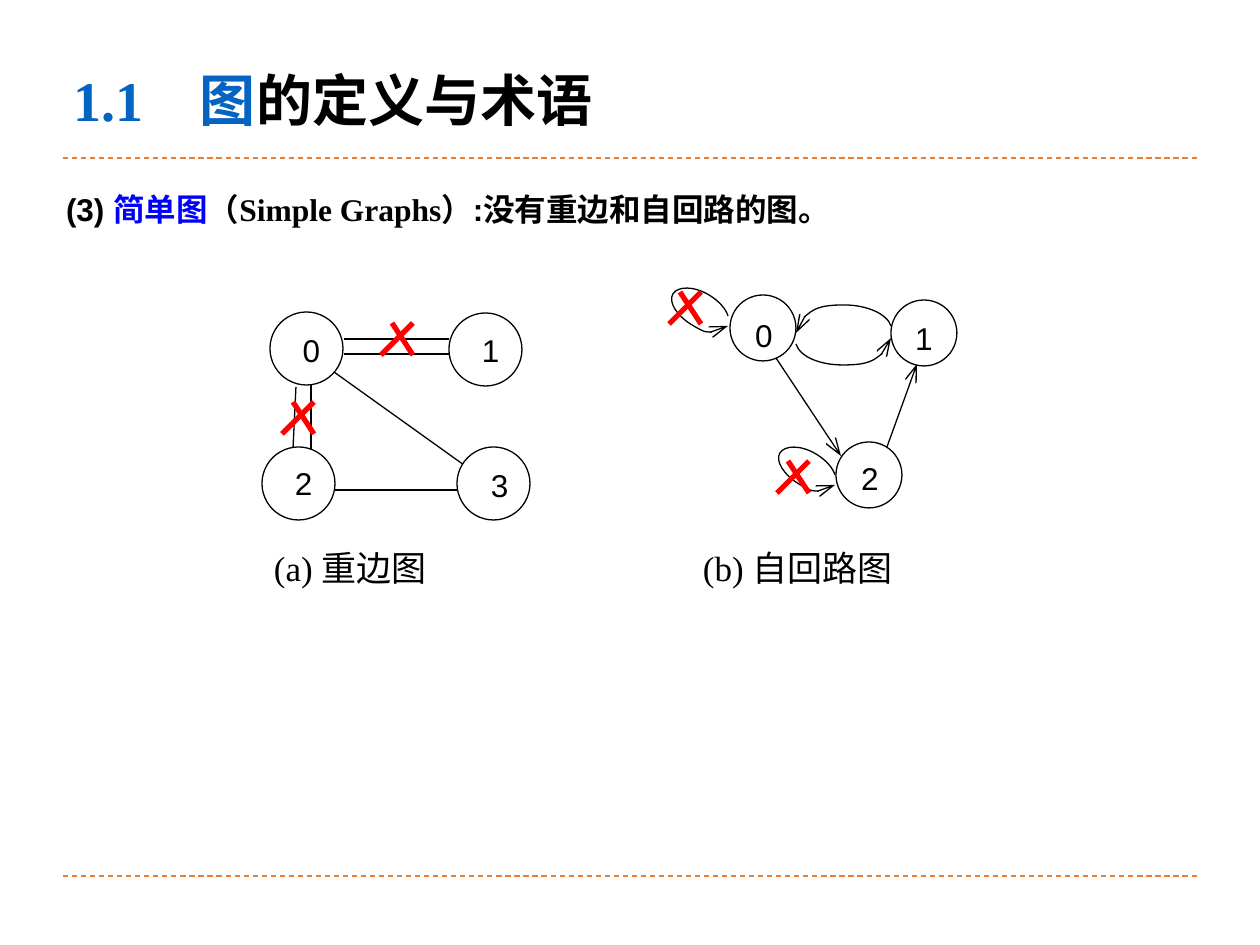
from dataclasses import dataclass

from lxml import etree
from pptx import Presentation
from pptx.dml.color import RGBColor
from pptx.enum.dml import MSO_LINE
from pptx.enum.shapes import MSO_CONNECTOR, MSO_SHAPE
from pptx.enum.text import MSO_ANCHOR, MSO_AUTO_SIZE, PP_ALIGN
from pptx.oxml.ns import qn
from pptx.util import Pt

STRAIGHT = MSO_CONNECTOR.STRAIGHT
OVAL, RECT = MSO_SHAPE.OVAL, MSO_SHAPE.RECTANGLE
DASH = MSO_LINE.DASH
TOP, MIDDLE = MSO_ANCHOR.TOP, MSO_ANCHOR.MIDDLE
LEFT, CENTER = PP_ALIGN.LEFT, PP_ALIGN.CENTER
NO_FIT = MSO_AUTO_SIZE.NONE


@dataclass(frozen=True)
class Theme:
    ink: RGBColor = RGBColor.from_string("000000")
    paper: RGBColor = RGBColor.from_string("FFFFFF")
    accent: RGBColor = RGBColor.from_string("0563C1")
    term: RGBColor = RGBColor.from_string("0000FF")
    rule: RGBColor = RGBColor.from_string("ED7D31")
    cross: RGBColor = RGBColor.from_string("FF0000")
    sans: str = "Arial"
    serif: str = "Times New Roman"
    title: int = 32
    body: int = 18
    caption: int = 20
    thin: float = 0.75
    thick: int = 3


T = Theme()
LOOP = [(0, 0), (-2, -7), (-9, -15), (-19, -21), (-34, -30), (-50, -30), (-55, -22),
        (-60, -14), (-51, 0), (-36, 9), (-21, 18), (-5, 19), (0, 10)]


def px(n):
    return round(n * 914400 / 126)


def add_run(p, text, size, font, color, bold=False):
    r = p.add_run()
    r.text = text
    r.font.size, r.font.name, r.font.bold = Pt(size), font, bold
    r.font.color.rgb = color


def place(sp, box):
    sp.left, sp.top, sp.width, sp.height = map(px, box)


def set_frame(tf, anchor, margins=(12, 6, 12, 6), wrap=True):
    tf.word_wrap = wrap
    tf.auto_size = NO_FIT
    tf.vertical_anchor = anchor
    tf.margin_left, tf.margin_top, tf.margin_right, tf.margin_bottom = map(px, margins)
    return tf.paragraphs[0]


def add_tab(p, pos):
    tabs = etree.SubElement(p._p.get_or_add_pPr(), qn("a:tabLst"))
    etree.SubElement(tabs, qn("a:tab"), pos=str(px(pos)), algn="l")


def add_arrow(line):
    etree.SubElement(line._get_or_add_ln(), qn("a:tailEnd"),
                     type="arrow", w="med", len="lg")


def add_line(shapes, x1, y1, x2, y2, color=T.ink, width=T.thin):
    c = shapes.add_connector(STRAIGHT, *map(px, (x1, y1, x2, y2)))
    c.line.color.rgb, c.line.width = color, Pt(width)
    etree.SubElement(c._element.spPr, qn("a:effectLst"))
    return c


def add_curve(shapes, x, y, controls):
    points = [(px(x + dx), px(y + dy)) for dx, dy in controls]
    builder = shapes.build_freeform(*points[0])
    builder.add_line_segments(points[1:], close=False)
    sp = builder.convert_to_shape()
    segments = list(sp._element.iter(qn("a:lnTo")))
    outline = segments[0].getparent()
    for i in range(0, len(segments), 3):
        bezier = etree.SubElement(outline, qn("a:cubicBezTo"))
        for segment in segments[i:i + 3]:
            bezier.append(segment[0])
            outline.remove(segment)
    sp.shadow.inherit = False
    sp.fill.background()
    sp.line.color.rgb, sp.line.width = T.ink, Pt(T.thin)
    add_arrow(sp.line)


def add_node(shapes, x, y, size, label, label_box):
    circle = shapes.add_shape(OVAL, *map(px, (x, y, size, size)))
    tag = shapes.add_shape(RECT, *map(px, label_box))
    for sp in (circle, tag):
        sp.shadow.inherit = False
        sp.fill.solid()
        sp.fill.fore_color.rgb = T.paper
    circle.line.color.rgb, circle.line.width = T.ink, Pt(T.thin)
    tag.line.fill.background()
    p = set_frame(tag.text_frame, TOP, (0, 0, 0, 0))
    p.alignment = CENTER
    add_run(p, label, T.body, T.sans, T.ink)


def add_cross(s, x, y):
    shapes = s.shapes.add_group_shape().shapes
    for x1, x2 in ((11, 32), (32, 0)):
        add_line(shapes, x + x1, y, x + x2, y + 32, T.cross, T.thick)


def add_captions(s, box):
    sp = s.shapes.add_textbox(*map(px, box))
    p = set_frame(sp.text_frame, MIDDLE)
    add_tab(p, 429)
    add_run(p, "(a) 重边图\t(b) 自回路图", T.caption, T.serif, T.ink)


def add_title(s, box):
    sp = s.shapes.title
    place(sp, box)
    p = set_frame(sp.text_frame, MIDDLE, (15, 6, 20, 6))
    add_tab(p, 126)
    p.alignment = LEFT
    add_run(p, "1.1\t图", T.title, T.serif, T.accent, True)
    add_run(p, "的定义与术语", T.title, T.serif, T.ink, True)


def add_definition(s, box):
    sp = s.placeholders[1]
    place(sp, box)
    p = set_frame(sp.text_frame, MIDDLE)
    pPr = p._p.get_or_add_pPr()
    pPr.set("marL", "0")
    pPr.set("indent", "0")
    etree.SubElement(pPr, qn("a:buNone"))
    p.space_before = Pt(0)
    for text, font, color in (
            ("(3) ", T.sans, T.ink),
            ("简单图", T.serif, T.term),
            ("（Simple Graphs）", T.serif, T.ink),
            (":没有重边和自回路的图", T.sans, T.ink),
            ("。", T.serif, T.ink)):
        add_run(p, text, T.body, font, color, True)


def add_multigraph(s, x, y):
    shapes = s.shapes.add_group_shape().shapes
    for x1, y1, x2, y2 in ((49, 71, 49, 137), (34, 75, 31, 137), (82, 27, 187, 27),
                           (82, 42, 188, 42), (72, 60, 202, 153), (72, 178, 195, 178)):
        add_line(shapes, x + x1, y + y1, x + x2, y + y2)
    for label, nx, ny, tx, ty in (("0", 8, 0, 35, 19), ("1", 187, 1, 214, 19),
                                  ("2", 0, 135, 27, 152), ("3", 195, 135, 223, 154)):
        add_node(shapes, x + nx, y + ny, 73, label, (x + tx, y + ty, 29, 31))
    for cx, cy in ((119, 11), (20, 90)):
        add_cross(s, x + cx, y + cy)


def add_loop_graph(s, x, y):
    shapes = s.shapes.add_group_shape().shapes
    for label, nx, ny, tx, ty in (("0", 61, 7, 82, 28), ("1", 222, 12, 242, 31),
                                  ("2", 167, 154, 188, 171)):
        add_node(shapes, x + nx, y + ny, 66, label, (x + tx, y + ty, 26, 28))
    for x1, y1, x2, y2 in ((107, 70, 172, 168), (218, 159, 248, 76)):
        add_arrow(add_line(shapes, x + x1, y + y1, x + x2, y + y2).line)
    add_curve(shapes, x, y, [(127, 56), (131, 69), (151, 77), (174, 77),
                             (200, 77), (222, 65), (222, 50)])
    add_curve(shapes, x, y, [(222, 38), (218, 26), (198, 17), (175, 17),
                             (149, 17), (127, 29), (127, 45)])
    for lx, ly in ((59, 28), (166, 187)):
        add_curve(shapes, x + lx, y + ly, LOOP)
    for cx, cy in ((0, 4), (108, 173)):
        add_cross(s, x + cx, y + cy)


def main():
    prs = Presentation()
    prs.slide_width, prs.slide_height = px(1260), px(945)
    s = prs.slides.add_slide(prs.slide_layouts[1])
    for y in (158, 876):
        add_line(s.shapes, 63, y, 1197, y, T.rule).line.dash_style = DASH
    add_title(s, (59, 59, 876, 81))
    add_definition(s, (54, 184, 1152, 50))
    add_loop_graph(s, 669, 288)
    add_multigraph(s, 262, 312)
    add_captions(s, (262, 540, 822, 55))
    prs.save("out.pptx")


if __name__ == "__main__":
    main()
